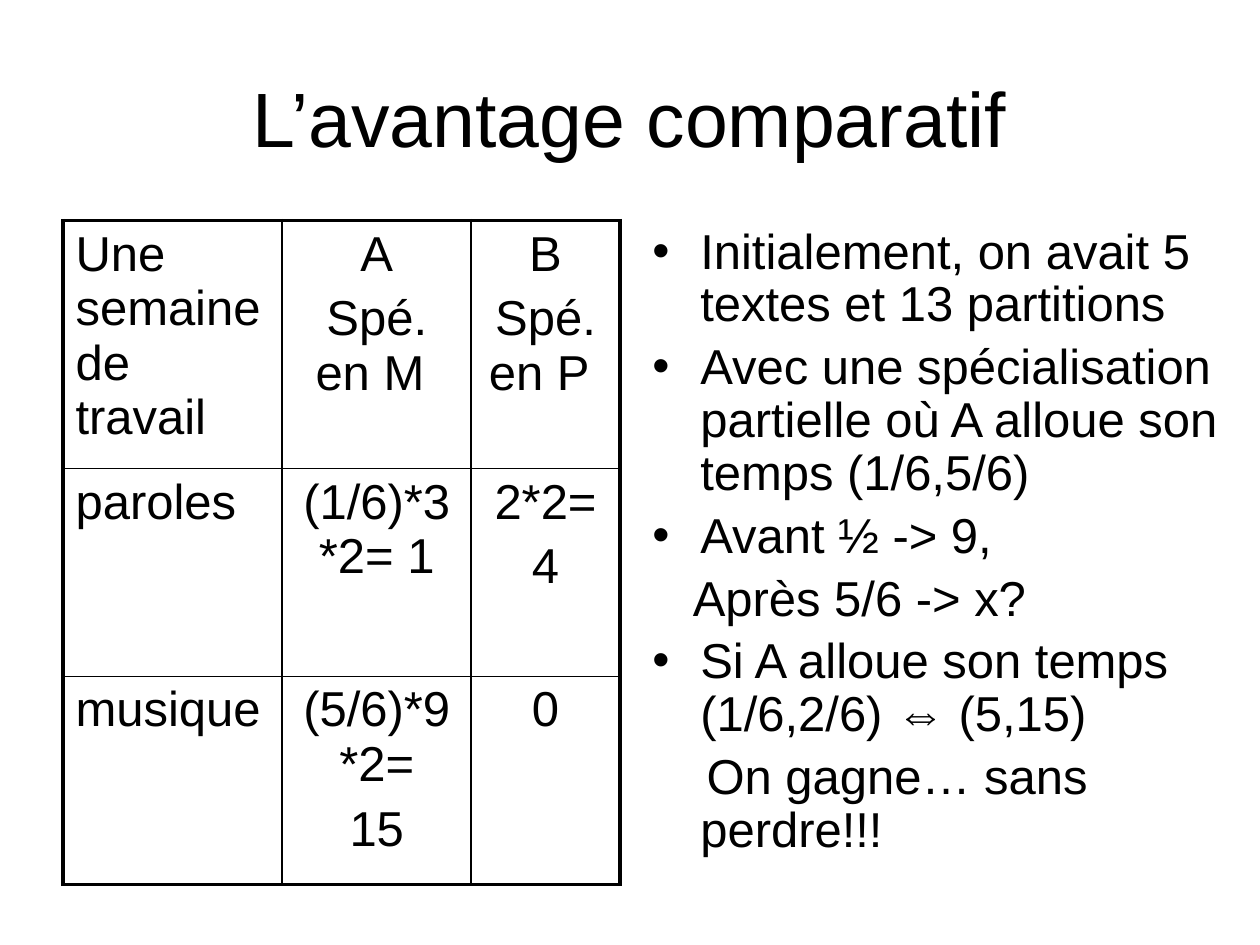
import dataclasses

import pptx
import pptx.dml.color
import pptx.enum.text
import pptx.oxml.ns
import pptx.util
from lxml import etree
from pptx.util import Inches

FONT = "Arial"
BLACK = "000000"
BODY_SIZE = 28
SPACE_BEFORE = pptx.util.Pt(0.2 * BODY_SIZE)
ALIGN = pptx.enum.text.PP_ALIGN
ANCHOR = pptx.enum.text.MSO_ANCHOR
THICK, THIN = 2.25, 1


@dataclasses.dataclass
class Point:
    text: str
    bulleted: bool = True
    first_indent: float = -0.38


POINTS = [
    Point("Initialement, on avait 5 textes et 13 partitions"),
    Point("Avec une spécialisation partielle où A alloue son temps (1/6,5/6)"),
    Point("Avant ½ -> 9,"),
    Point("Après 5/6 -> x?", False, -0.06),
    Point("Si A alloue son temps (1/6,2/6) ⇔ (5,15)"),
    Point("On gagne… sans perdre!!!", False, 0.05),
]

# Each cell is a list of paragraphs
ROWS = [
    [["Une semaine de travail"], ["A", "Spé. en M "], ["B", "Spé. en P "]],
    [["paroles"], ["(1/6)*3*2= 1"], ["2*2=", "4"]],
    [["musique"], ["(5/6)*9*2=", "15"], ["0"]],
]
COLUMN_WIDTHS = [1.74, 1.5, 1.18]
ROW_HEIGHT = 1.65


def color(value: str) -> pptx.dml.color.RGBColor:
    return pptx.dml.color.RGBColor.from_string(value)


def add_span(para, text: str, size: float) -> None:
    span = para.add_run()
    span.text = text
    span.font.name = FONT
    span.font.size = pptx.util.Pt(size)
    span.font.color.rgb = color(BLACK)


def add_box(page, left: float, top: float, width: float, height: float):
    box = page.shapes.add_textbox(Inches(left), Inches(top), Inches(width), Inches(height))
    box.text_frame.word_wrap = True
    return box.text_frame


def next_para(frame, index: int):
    return frame.paragraphs[0] if index == 0 else frame.add_paragraph()


def add_child(parent, tag: str, **attributes: str):
    return etree.SubElement(parent, pptx.oxml.ns.qn(tag), **attributes)


def set_bullet(para, point: Point) -> None:
    properties = para._p.get_or_add_pPr()
    properties.set("marL", str(Inches(0.38)))
    properties.set("indent", str(Inches(point.first_indent)))
    if point.bulleted:
        add_child(properties, "a:buFont", typeface=FONT)
        add_child(properties, "a:buChar", char="•")
    else:
        add_child(properties, "a:buNone")


def set_borders(cell, row: int, column: int) -> None:
    """Draw thick lines on the outside of the table and thin ones inside."""
    outer = {
        "L": column == 0,
        "R": column == len(COLUMN_WIDTHS) - 1,
        "T": row == 0,
        "B": row == len(ROWS) - 1,
    }
    properties = cell._tc.get_or_add_tcPr()
    for side, is_outer in outer.items():
        width = pptx.util.Pt(THICK if is_outer else THIN)
        line = add_child(properties, f"a:ln{side}", w=str(width))
        add_child(add_child(line, "a:solidFill"), "a:srgbClr", val=BLACK)


def add_work_table(page) -> None:
    frame = page.shapes.add_table(
        len(ROWS), len(COLUMN_WIDTHS), Inches(0.5), Inches(1.75),
        Inches(sum(COLUMN_WIDTHS)), Inches(ROW_HEIGHT * len(ROWS)))
    table = frame.table
    table.first_row = table.horz_banding = False
    for column, width in zip(table.columns, COLUMN_WIDTHS):
        column.width = Inches(width)
    for row_index, row in enumerate(ROWS):
        table.rows[row_index].height = Inches(ROW_HEIGHT)
        for column_index, lines in enumerate(row):
            cell = table.cell(row_index, column_index)
            set_borders(cell, row_index, column_index)
            cell.fill.background()
            for index, text in enumerate(lines):
                para = next_para(cell.text_frame, index)
                para.alignment = ALIGN.CENTER if column_index else ALIGN.LEFT
                para.space_before = SPACE_BEFORE
                add_span(para, text, BODY_SIZE)


def main() -> None:
    deck = pptx.Presentation()
    deck.slide_width, deck.slide_height = Inches(10), Inches(7.5)
    page = deck.slides.add_slide(deck.slide_layouts[6])

    # Title
    title = add_box(page, 0.5, 0.3, 9, 1.25)
    title.vertical_anchor = ANCHOR.MIDDLE
    title.paragraphs[0].alignment = ALIGN.CENTER
    add_span(title.paragraphs[0], "L’avantage comparatif", 44)

    # Table of one week's work
    add_work_table(page)

    # Bulleted reasoning
    body = add_box(page, 5.08, 1.75, 4.72, 5.47)
    for index, point in enumerate(POINTS):
        para = next_para(body, index)
        para.line_spacing = 0.9
        para.space_before = SPACE_BEFORE
        set_bullet(para, point)
        add_span(para, point.text, BODY_SIZE)

    deck.save("out.pptx")


if __name__ == "__main__":
    main()
